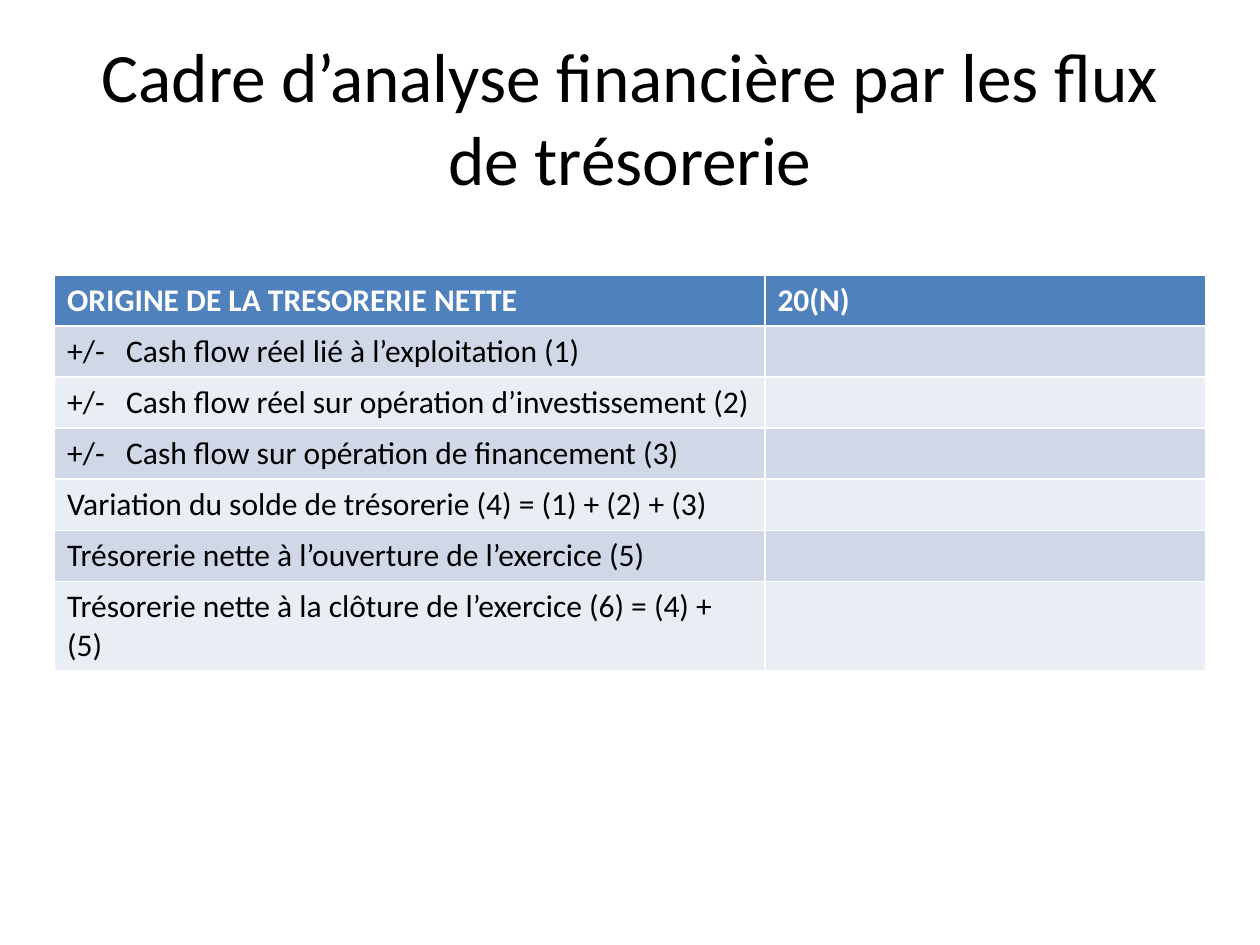
from pptx import Presentation
from pptx.dml.color import RGBColor
from pptx.enum.text import MSO_ANCHOR, MSO_AUTO_SIZE, PP_ALIGN
from pptx.util import Cm, Pt

COLORS = {
    "text": "000000",
    "header_text": "FFFFFF",
    "header": "4F81BD",
    "odd_row": "D0D8E8",
    "even_row": "E9EDF4",
}
FONT = "Calibri"
ROWS = [
    ("ORIGINE DE LA TRESORERIE NETTE", "20(N)"),
    ("+/-\tCash flow réel lié à l’exploitation (1)", ""),
    ("+/-\tCash flow réel sur opération d’investissement (2)", ""),
    ("+/-\tCash flow sur opération de financement (3)", ""),
    ("Variation du solde de trésorerie (4) = (1) + (2) + (3)", ""),
    ("Trésorerie nette à l’ouverture de l’exercice (5)", ""),
    ("Trésorerie nette à la clôture de l’exercice (6) = (4) + (5)", ""),
]
COLUMN_WIDTHS = [Cm(14.32), Cm(8.88)]
ROW_HEIGHT = Cm(1.03)
SIGN_INDENT = Cm(1.19)


def style_font(font, size, color, bold=False):
    font.name = FONT
    font.size = Pt(size)
    font.bold = bold
    font.color.rgb = RGBColor.from_string(COLORS[color])


prs = Presentation()
prs.slide_width, prs.slide_height = Cm(25.4), Cm(19.05)
slide = prs.slides.add_slide(prs.slide_layouts[5])

title = slide.shapes.title
title.left, title.top, title.width, title.height = Cm(1.27), Cm(0.76), Cm(22.86), Cm(3.18)
title.text_frame.text = "Cadre d’analyse financière par les flux de trésorerie"
title.text_frame.auto_size = MSO_AUTO_SIZE.NONE
title.text_frame.vertical_anchor = MSO_ANCHOR.MIDDLE
heading = title.text_frame.paragraphs[0]
heading.alignment = PP_ALIGN.CENTER
style_font(heading.font, 39.6, "text")

cash_table = slide.shapes.add_table(
    len(ROWS), len(COLUMN_WIDTHS), Cm(1.1), Cm(5.54),
    sum(COLUMN_WIDTHS), ROW_HEIGHT * len(ROWS),
).table
for column, width in zip(cash_table.columns, COLUMN_WIDTHS):
    column.width = width

for r, labels in enumerate(ROWS):
    cash_table.rows[r].height = ROW_HEIGHT
    is_header = r == 0
    band = "header" if is_header else "odd_row" if r % 2 else "even_row"
    for c, label in enumerate(labels):
        cell = cash_table.cell(r, c)
        cell.fill.solid()
        cell.fill.fore_color.rgb = RGBColor.from_string(COLORS[band])
        cell.text = label
        paragraph = cell.text_frame.paragraphs[0]
        style_font(paragraph.font, 18, "header_text" if is_header else "text", is_header)
        if "\t" in label:
            # Hanging indent: the tab after the sign stops at the left margin
            properties = paragraph._p.get_or_add_pPr()
            properties.set("marL", str(SIGN_INDENT))
            properties.set("indent", str(-SIGN_INDENT))

prs.save("out.pptx")
